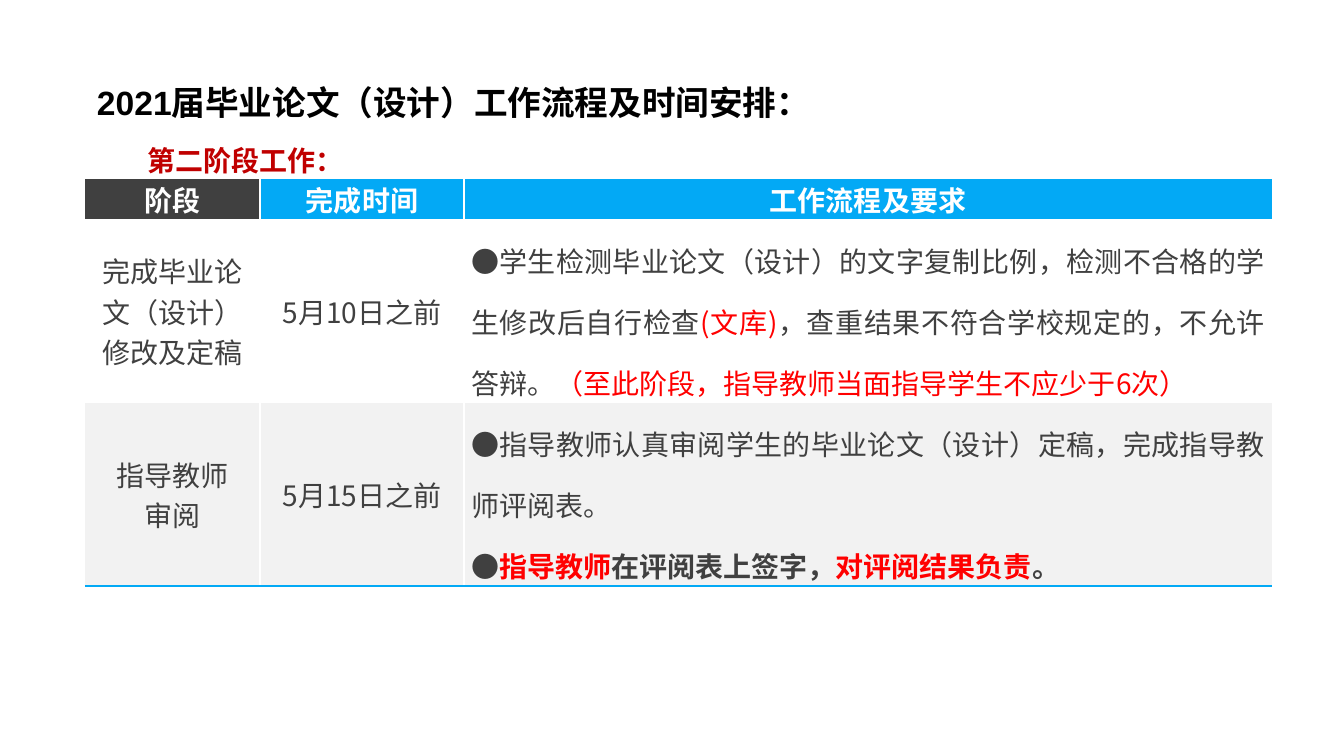
import pptx
import pptx.util
import pptx.dml.color
import pptx.enum.text
import pptx.oxml
import pptx.oxml.ns
from pptx.util import Cm

COLORS = {
    "black": "000000",
    "white": "FFFFFF",
    "dark": "404040",
    "crimson": "C00000",
    "red": "FF0000",
    "blue": "03A9F5",
    "pale": "F2F2F2",
}
CJK_FONT = "Noto Sans CJK SC"
NO_GRID_STYLE = "{2D5ABB26-0587-4C30-8999-92F81FD0307C}"
ALIGN = pptx.enum.text.PP_ALIGN
ANCHOR = pptx.enum.text.MSO_ANCHOR

COLUMN_WIDTHS = [4.42, 5.13, 20.37]
ROW_HEIGHTS = [1.02, 4.62, 4.62]
HEADINGS = ["阶段", "完成时间", "工作流程及要求"]
STAGES = [
    (
        ["完成毕业论文（设计）修改及定稿"],
        "5月10日之前",
        [[
            ("●学生检测毕业论文（设计）的文字复制比例，检测不合格的学生修改后自行检查", "dark", False),
            ("(文库)", "red", False),
            ("，查重结果不符合学校规定的，不允许答辩。", "dark", False),
            ("（至此阶段，指导教师当面指导学生不应少于6次）", "red", False),
        ]],
    ),
    (
        ["指导教师", "审阅"],
        "5月15日之前",
        [
            [("●指导教师认真审阅学生的毕业论文（设计）定稿，完成指导教师评阅表。", "dark", False)],
            [
                ("●", "dark", False),
                ("指导教师", "red", True),
                ("在评阅表上签字，", "dark", True),
                ("对评阅结果负责", "red", True),
                ("。", "dark", True),
            ],
        ],
    ),
]


def rgb(color):
    return pptx.dml.color.RGBColor.from_string(COLORS[color])


def format_span(span, color, bold, size=20, latin=CJK_FONT):
    span.font.size = pptx.util.Pt(size)
    span.font.bold = bold
    span.font.color.rgb = rgb(color)
    span.font.name = latin
    east_asian = pptx.oxml.parse_xml(
        f'<a:ea {pptx.oxml.ns.nsdecls("a")} typeface="{CJK_FONT}"/>'
    )
    span.font.fill
    span.font._element.append(east_asian)


def place_heading(box, text, left, top, width, height, color, size):
    box.left, box.top, box.width, box.height = Cm(left), Cm(top), Cm(width), Cm(height)
    frame = box.text_frame
    frame.text = text
    frame.word_wrap = True
    frame.auto_size = pptx.enum.text.MSO_AUTO_SIZE.NONE
    frame.vertical_anchor = ANCHOR.MIDDLE
    para = frame.paragraphs[0]
    para.alignment = ALIGN.LEFT
    format_span(para.runs[0], color, True, size, "Arial")


def add_border(cell, side, color):
    cell._tc.get_or_add_tcPr().append(pptx.oxml.parse_xml(
        f'<a:ln{side} {pptx.oxml.ns.nsdecls("a")} w="19050"><a:solidFill>'
        f'<a:srgbClr val="{COLORS[color]}"/></a:solidFill></a:ln{side}>'
    ))


def fill_cell(cell, paragraphs, fill, borders, align=ALIGN.CENTER, anchor=ANCHOR.MIDDLE, spacing=1.0):
    for side, color in borders:
        add_border(cell, side, color)
    cell.fill.solid()
    cell.fill.fore_color.rgb = rgb(fill)
    cell.margin_left = cell.margin_right = Cm(0.18)
    cell.margin_top = cell.margin_bottom = 0
    cell.vertical_anchor = anchor
    frame = cell.text_frame
    for index, spans in enumerate(paragraphs):
        para = frame.add_paragraph() if index else frame.paragraphs[0]
        para.alignment = align
        para.line_spacing = spacing
        for text, color, bold in spans:
            span = para.add_run()
            span.text = text
            format_span(span, color, bold)


def cell_borders(column, last_row):
    borders = []
    if column > 0:
        borders.append(("L", "white"))
    if column < len(COLUMN_WIDTHS) - 1:
        borders.append(("R", "white"))
    if last_row:
        borders.append(("B", "blue"))
    return borders


def add_schedule(page):
    graphic = page.shapes.add_table(
        len(ROW_HEIGHTS), len(COLUMN_WIDTHS), Cm(2.14), Cm(4.5),
        Cm(sum(COLUMN_WIDTHS)), Cm(sum(ROW_HEIGHTS)),
    )
    graphic.element.find(".//" + pptx.oxml.ns.qn("a:tableStyleId")).text = NO_GRID_STYLE
    table = graphic.table
    table.horz_banding = False
    for column, width in zip(table.columns, COLUMN_WIDTHS):
        column.width = Cm(width)
    for row, height in zip(table.rows, ROW_HEIGHTS):
        row.height = Cm(height)
    for column, heading in enumerate(HEADINGS):
        fill_cell(table.cell(0, column), [[(heading, "white", True)]],
                  "blue" if column else "dark", cell_borders(column, False), anchor=ANCHOR.TOP)
    for row, (stage, deadline, tasks) in enumerate(STAGES, start=1):
        last_row = row == len(STAGES)
        fill = "pale" if last_row else "white"
        for column, lines in enumerate([stage, [deadline]]):
            fill_cell(table.cell(row, column), [[(line, "dark", False)] for line in lines],
                      fill, cell_borders(column, last_row))
        fill_cell(table.cell(row, 2), tasks, fill, cell_borders(2, last_row),
                  ALIGN.JUSTIFY, ANCHOR.TOP, 1.5)


def main():
    deck = pptx.Presentation()
    deck.slide_width, deck.slide_height = Cm(33.87), Cm(19.05)
    page = deck.slides.add_slide(deck.slide_layouts[5])
    place_heading(page.shapes.title, "2021届毕业论文（设计）工作流程及时间安排：",
                  2.19, 1.82, 29.36, 1.5, "black", 24)
    stage_box = page.shapes.add_textbox(0, 0, Cm(1), Cm(1))
    place_heading(stage_box, "第二阶段工作：", 3.46, 3.44, 28.09, 1.2, "crimson", 20)
    add_schedule(page)
    deck.save("out.pptx")


if __name__ == "__main__":
    main()
